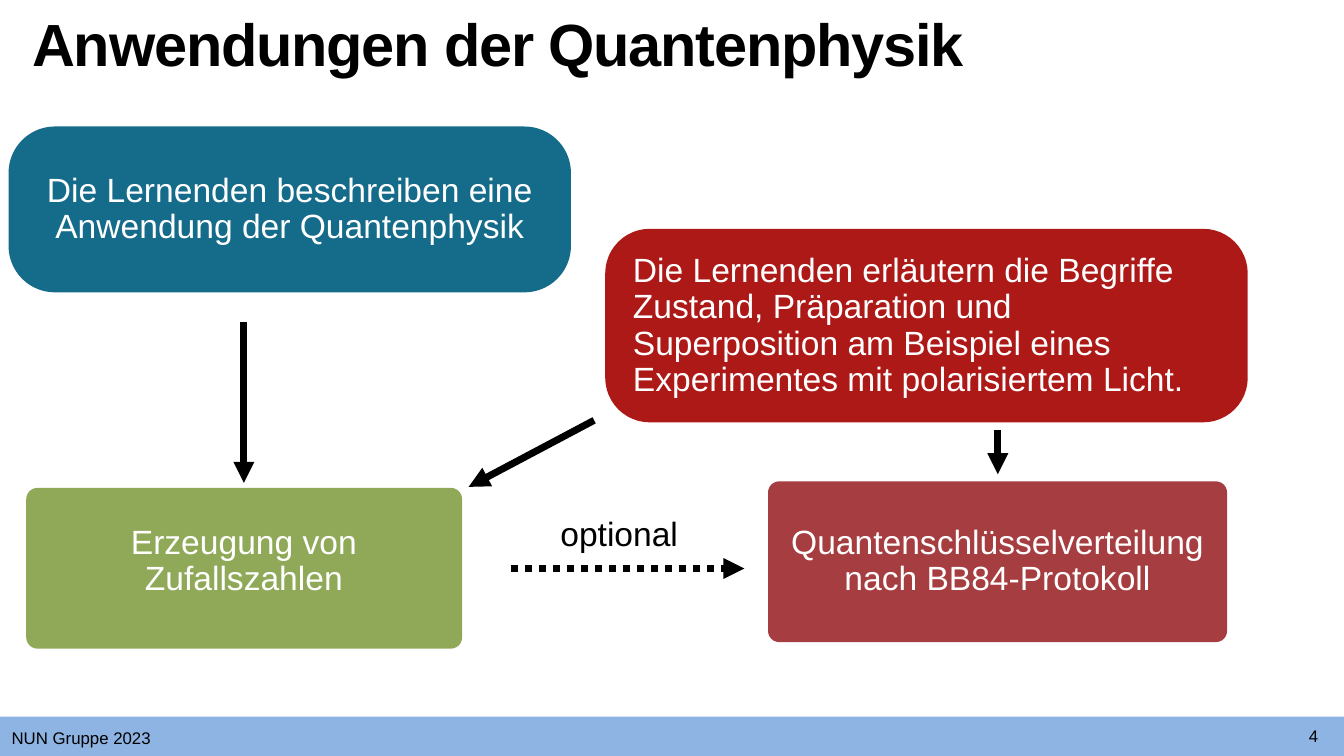
"""Build a slide linking learning goals to applications of quantum physics."""
from typing import NamedTuple, Optional

from lxml import etree
from pptx import Presentation
from pptx.dml.color import RGBColor
from pptx.enum.dml import MSO_LINE
from pptx.enum.shapes import MSO_CONNECTOR, MSO_SHAPE
from pptx.enum.text import MSO_ANCHOR, PP_ALIGN
from pptx.oxml.ns import qn
from pptx.util import Inches, Pt

RECTANGLE = MSO_SHAPE.RECTANGLE
ROUNDED = MSO_SHAPE.ROUNDED_RECTANGLE
STRAIGHT = MSO_CONNECTOR.STRAIGHT
DOTTED = MSO_LINE.ROUND_DOT
LEFT, CENTER = PP_ALIGN.LEFT, PP_ALIGN.CENTER
TOP, MIDDLE, BOTTOM = MSO_ANCHOR.TOP, MSO_ANCHOR.MIDDLE, MSO_ANCHOR.BOTTOM

BLACK = RGBColor(0x00, 0x00, 0x00)
WHITE = RGBColor(0xFF, 0xFF, 0xFF)
FOOTER_BLUE = RGBColor(0x8E, 0xB4, 0xE3)
PETROL = RGBColor(0x15, 0x6B, 0x8A)
GREEN = RGBColor(0x90, 0xA9, 0x59)
BRICK = RGBColor(0xA6, 0x3D, 0x40)
RED = RGBColor(0xAC, 0x19, 0x17)
FONT = "Arial"
WIDTH, HEIGHT = 26.67, 15
FOOTER_HEIGHT = 0.78


class Area(NamedTuple):
    left: float
    top: float
    width: float
    height: float


class Panel(NamedTuple):
    area: Area
    fill: RGBColor
    corner: Optional[float] = None


class Label(NamedTuple):
    text: str
    area: Area
    size: float = 48
    color: RGBColor = BLACK
    align: PP_ALIGN = LEFT
    anchor: MSO_ANCHOR = MIDDLE
    spacing: float = 0.9
    wrap: bool = True
    inset: float = 0.06
    bold: bool = False
    tracking: int = 0


class Card(NamedTuple):
    panel: Panel
    label: Label


class Arrow(NamedTuple):
    start: tuple[float, float]
    end: tuple[float, float]
    dotted: bool = False


FOOTER = Panel(Area(0, HEIGHT - FOOTER_HEIGHT, WIDTH, FOOTER_HEIGHT), FOOTER_BLUE)

CARDS = [
    Card(Panel(Area(0.17, 2.51, 11.16, 3.29), PETROL, 0.28),
         Label("Die Lernenden beschreiben eine Anwendung der Quantenphysik",
               Area(0.86, 3.36, 9.78, 1.59), color=WHITE, align=CENTER)),
    Card(Panel(Area(0.52, 9.68, 8.65, 3.19), GREEN, 0.07),
         Label("Erzeugung von Zufallszahlen",
               Area(2.06, 10.34, 5.56, 1.6), color=WHITE, align=CENTER)),
    Card(Panel(Area(15.24, 9.55, 9.11, 3.19), BRICK, 0.07),
         Label("Quantenschlüsselverteilung nach BB84-Protokoll",
               Area(15.47, 10.34, 8.65, 1.6), color=WHITE, align=CENTER)),
    Card(Panel(Area(12.01, 4.54, 12.75, 3.84), RED, 0.23),
         Label("Die Lernenden erläutern die Begriffe Zustand, Präparation und "
               "Superposition am Beispiel eines Experimentes mit polarisiertem Licht.",
               Area(12.5, 4.96, 11.77, 3.02), color=WHITE)),
]

LABELS = [
    Label("NUN Gruppe 2023", Area(0.18, 14.39, 4.44, 0.7), size=24,
          anchor=TOP, spacing=1, inset=0.05),
    Label("4", Area(25.91, 14.36, 0.31, 0.5), size=24, align=CENTER,
          anchor=BOTTOM, spacing=1, wrap=False),
    Label("Anwendungen der Quantenphysik", Area(0.58, 0.35, 24.03, 1.57), size=85,
          anchor=TOP, spacing=0.8, bold=True, tracking=-170),
    Label("optional", Area(11.06, 10.18, 2.52, 0.88), wrap=False),
]

ARROWS = [
    Arrow((10.14, 11.28), (14.77, 11.28), dotted=True),
    Arrow((4.84, 6.39), (4.84, 9.58)),
    Arrow((11.79, 8.34), (9.3, 9.66)),
    Arrow((19.8, 8.53), (19.8, 9.41)),
]


def draw_panel(slide, panel: Panel) -> None:
    """Draw a filled panel, rounded if it has a corner ratio."""
    outline = RECTANGLE if panel.corner is None else ROUNDED
    shape = slide.shapes.add_shape(outline, *map(Inches, panel.area))
    if panel.corner is not None:
        shape.adjustments[0] = panel.corner
    shape.shadow.inherit = False
    shape.fill.solid()
    shape.fill.fore_color.rgb = panel.fill
    shape.line.fill.background()


def draw_label(slide, label: Label) -> None:
    """Draw one paragraph of text in its area."""
    frame = slide.shapes.add_textbox(*map(Inches, label.area)).text_frame
    frame.word_wrap = label.wrap
    frame.vertical_anchor = label.anchor
    frame.margin_left = frame.margin_right = Inches(label.inset)
    frame.margin_top = frame.margin_bottom = Inches(label.inset)
    paragraph = frame.paragraphs[0]
    paragraph.alignment = label.align
    paragraph.line_spacing = label.spacing
    run = paragraph.add_run()
    run.text = label.text
    run.font.name = FONT
    run.font.size = Pt(label.size)
    run.font.bold = label.bold
    run.font.color.rgb = label.color
    if label.tracking:
        run._r.get_or_add_rPr().set("spc", str(label.tracking))


def draw_arrow(slide, arrow: Arrow) -> None:
    """Draw a thick black arrow."""
    connector = slide.shapes.add_connector(
        STRAIGHT, *map(Inches, arrow.start + arrow.end))
    connector.line.color.rgb = BLACK
    connector.line.width = Pt(10)
    if arrow.dotted:
        connector.line.dash_style = DOTTED
    properties = connector._element.spPr
    etree.SubElement(properties.find(qn("a:ln")), qn("a:tailEnd"), type="triangle")
    etree.SubElement(properties, qn("a:effectLst"))


def main() -> None:
    """Assemble and save the slide."""
    presentation = Presentation()
    presentation.slide_width = Inches(WIDTH)
    presentation.slide_height = Inches(HEIGHT)
    slide = presentation.slides.add_slide(presentation.slide_layouts[6])
    draw_panel(slide, FOOTER)
    for card in CARDS:
        draw_panel(slide, card.panel)
        draw_label(slide, card.label)
    for label in LABELS:
        draw_label(slide, label)
    for arrow in ARROWS:
        draw_arrow(slide, arrow)
    presentation.save("out.pptx")


if __name__ == "__main__":
    main()
